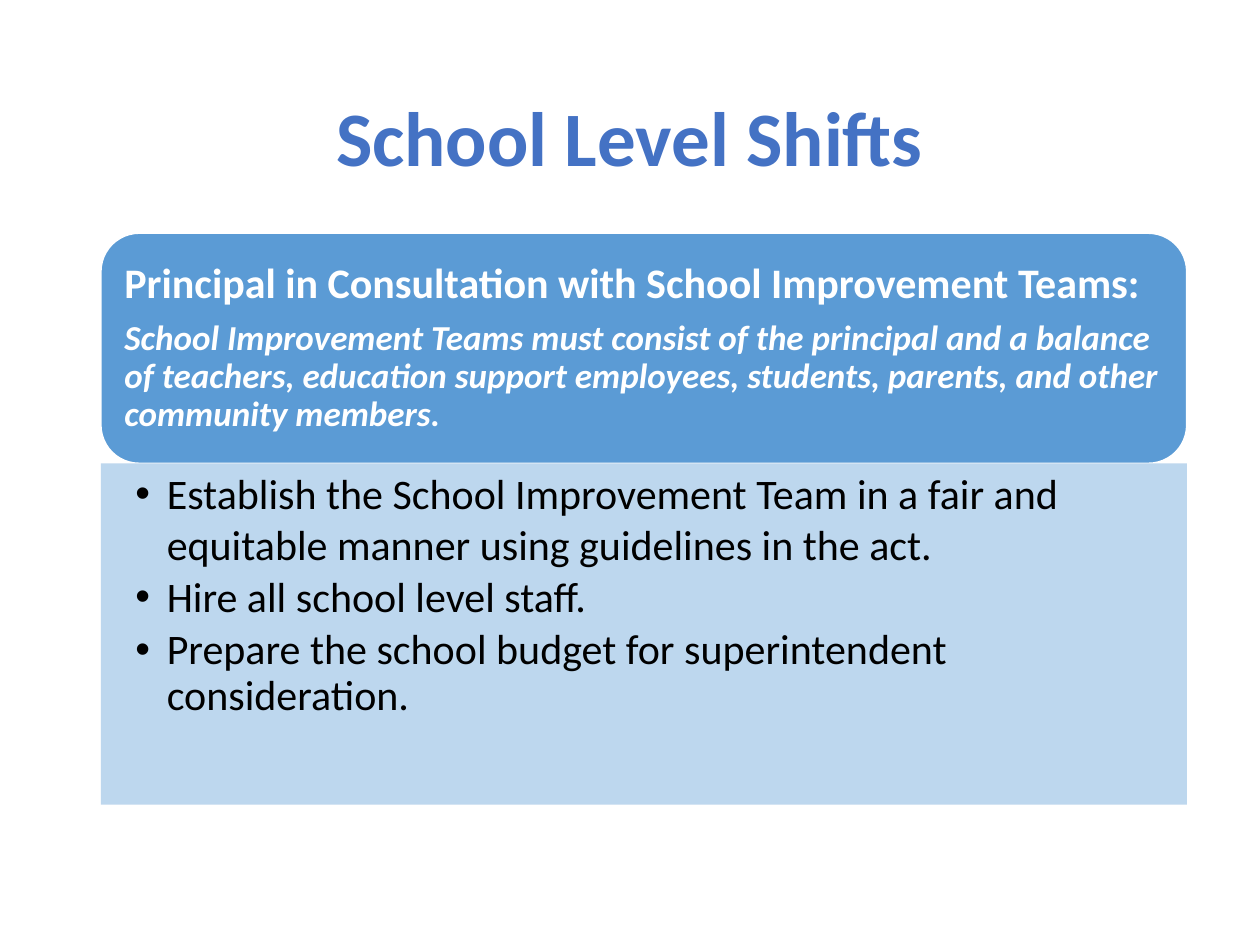
"""Build the School Level Shifts slide."""
from lxml.etree import SubElement
from pptx import Presentation
from pptx.dml.color import RGBColor
from pptx.enum.shapes import MSO_SHAPE
from pptx.enum.text import MSO_ANCHOR, PP_ALIGN
from pptx.oxml.ns import qn
from pptx.util import Pt

TITLE_BLUE = RGBColor(0x44, 0x72, 0xC4)
HEADER_BLUE = RGBColor(0x5B, 0x9B, 0xD5)
PALE_BLUE = RGBColor(0xBD, 0xD7, 0xEE)
WHITE = RGBColor(0xFF, 0xFF, 0xFF)
BLACK = RGBColor(0, 0, 0)


def add_text(frame, text, size, color, bold=False, italic=False,
             align=PP_ALIGN.LEFT, spacing=0.9, after=0, bullet=False):
    first = frame.paragraphs[0]
    paragraph = frame.add_paragraph() if first.runs else first
    paragraph.alignment = align
    paragraph.line_spacing = spacing
    paragraph.space_after = Pt(after)
    if bullet:
        properties = paragraph._p.get_or_add_pPr()
        properties.set("marL", str(Pt(18)))
        properties.set("indent", str(-Pt(18)))
        SubElement(properties, qn("a:buFont"), typeface="Arial")
        SubElement(properties, qn("a:buChar"), char="•")
    run = paragraph.add_run()
    run.text = text
    run.font.name = "Calibri"
    run.font.size = Pt(size)
    run.font.bold = bold
    run.font.italic = italic
    run.font.color.rgb = color


def add_panel(preset, top, height, fill, anchor, margins):
    panel = slide.shapes.add_shape(preset, Pt(57.6), Pt(top), Pt(620.6), Pt(height))
    panel.shadow.inherit = False
    panel.fill.solid()
    panel.fill.fore_color.rgb = fill
    panel.line.fill.background()
    frame = panel.text_frame
    frame.word_wrap = True
    frame.vertical_anchor = anchor
    (frame.margin_left, frame.margin_top,
     frame.margin_right, frame.margin_bottom) = [Pt(margin) for margin in margins]
    return panel


presentation = Presentation()
presentation.slide_width = Pt(720)
presentation.slide_height = Pt(540)
slide = presentation.slides.add_slide(presentation.slide_layouts[6])

title = slide.shapes.add_textbox(Pt(49.5), Pt(28.8), Pt(621), Pt(104.4)).text_frame
title.word_wrap = True
title.vertical_anchor = MSO_ANCHOR.MIDDLE
add_text(title, "School Level Shifts", size=44, color=TITLE_BLUE, bold=True,
         align=PP_ALIGN.CENTER)

teams = add_panel(MSO_SHAPE.ROUNDED_RECTANGLE, 133.2, 131.6, HEADER_BLUE,
                  MSO_ANCHOR.MIDDLE, (7.2, 7.2, 7.2, 7.2))
teams.line.color.rgb = WHITE
teams.line.width = Pt(1)
add_text(teams.text_frame, "Principal in Consultation with School Improvement Teams:",
         size=24, color=WHITE, bold=True, after=7.2)
add_text(teams.text_frame,
         "School Improvement Teams must consist of the principal and a balance of "
         "teachers, education support employees, students, parents, and other "
         "community members.",
         size=20, color=WHITE, bold=True, italic=True, after=7.2)

duties = add_panel(MSO_SHAPE.RECTANGLE, 264.8, 195, PALE_BLUE,
                   MSO_ANCHOR.TOP, (19.7, 2.4, 13.7, 2.4))
for duty, spacing in (
    ("Establish the School Improvement Team in a fair and equitable manner "
     "using guidelines in the act.", 1.0),
    ("Hire all school level staff.", 0.9),
    ("Prepare the school budget for superintendent consideration.", 0.9),
):
    add_text(duties.text_frame, duty, size=24, color=BLACK, spacing=spacing,
             after=4.2, bullet=True)

presentation.save("out.pptx")
